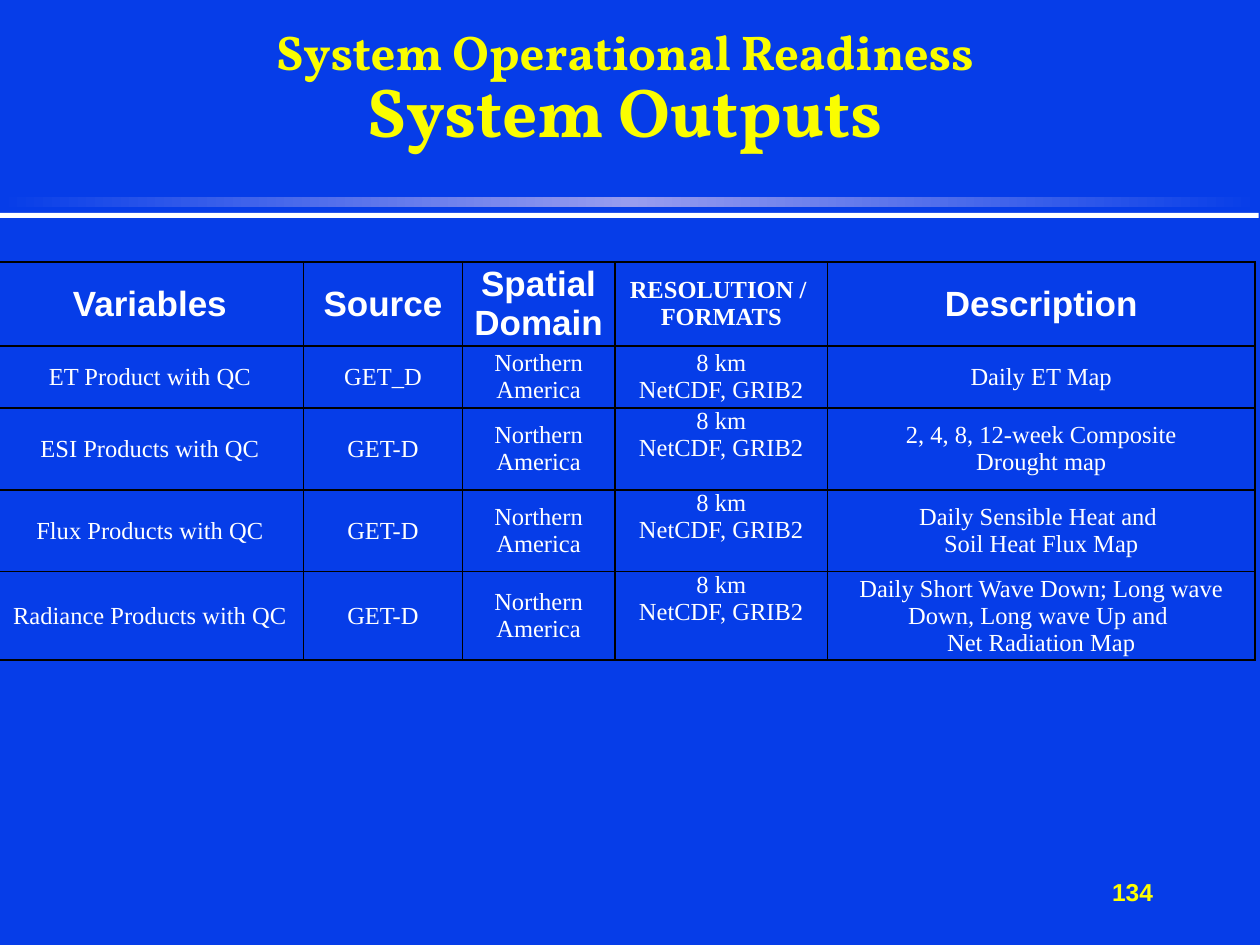
import pptx
import pptx.util
import pptx.dml.color
import pptx.enum.shapes
import pptx.enum.text
import pptx.oxml
import pptx.oxml.ns

WIDE, HIGH = 10, 7.5
HUES = {"back": "063DE8", "glow": "979CEF", "white": "FFFFFF",
        "title": "FAFD00", "page": "FFFF00", "grid": "000000"}
COLS = [2.44, 1.26, 1.21, 1.69, 3.39]
ROWS = [0.62, 0.49, 0.65, 0.65, 0.65]
FORMAT = 3
HEADS = ["Variables", "Source", "Spatial Domain",
         "RESOLUTION / \nFORMATS", "Description"]
ITEMS = [
    ("ET Product with QC", "GET_D", "Daily ET Map"),
    ("ESI Products with QC", "GET-D",
     "2, 4, 8, 12-week Composite\nDrought map"),
    ("Flux Products with QC", "GET-D",
     "Daily Sensible Heat and \nSoil Heat Flux Map"),
    ("Radiance Products with QC", "GET-D",
     "Daily Short Wave Down; Long wave Down, Long wave Up and \n"
     "Net Radiation Map"),
]
ALIGN = pptx.enum.text.PP_ALIGN
ANCHOR = pptx.enum.text.MSO_ANCHOR


def inch(*sizes):
    return [pptx.util.Inches(size) for size in sizes]


def color(name):
    return pptx.dml.color.RGBColor.from_string(HUES[name])


def style(run, size, face, hue, bold):
    run.font.size = pptx.util.Pt(size)
    run.font.name = face
    run.font.bold = bold
    run.font.color.rgb = color(hue)


def add_bar(slide, top, high):
    bar = slide.shapes.add_shape(
        pptx.enum.shapes.MSO_SHAPE.RECTANGLE, *inch(0, top, WIDE - 0.01, high))
    bar.shadow.inherit = False
    bar.line.fill.background()
    return bar


def fill_glow(bar):
    """Fade from the background to a light centre and back again."""
    bar.fill.gradient()
    bar.fill.gradient_angle = 0
    stops = bar._element.spPr.find(".//" + pptx.oxml.ns.qn("a:gsLst"))
    for stop in list(stops):
        stops.remove(stop)
    for place, hue in ((0, "back"), (50, "glow"), (100, "back")):
        stops.append(pptx.oxml.parse_xml(
            f'<a:gs {pptx.oxml.ns.nsdecls("a")} pos="{place * 1000}">'
            f'<a:srgbClr val="{HUES[hue]}"/></a:gs>'))


def add_text(slide, box, text, align, anchor, wrap=True):
    frame = slide.shapes.add_textbox(*inch(*box)).text_frame
    frame.word_wrap = wrap
    frame.vertical_anchor = anchor
    para = frame.paragraphs[0]
    para.text = text
    para.alignment = align
    return para


def add_title(slide):
    para = add_text(slide, (0.42, 0.33, 9.08, 0.92),
                    "System Operational Readiness\vSystem Outputs",
                    ALIGN.CENTER, ANCHOR.BOTTOM)
    para.line_spacing = 0.85
    for run, size in zip(para.runs, (27.9, 39.6)):
        style(run, size, "Vollkorn", "title", True)


def rule_cell(cell):
    props = cell._tc.get_or_add_tcPr()
    for side in "LRTB":
        props.append(pptx.oxml.parse_xml(
            f'<a:ln{side} {pptx.oxml.ns.nsdecls("a")} w="12700"><a:solidFill>'
            f'<a:srgbClr val="{HUES["grid"]}"/></a:solidFill></a:ln{side}>'))
    cell.fill.background()


def fill_cell(cell, text, size, face, bold, anchor):
    rule_cell(cell)
    cell.margin_left = cell.margin_right = pptx.util.Inches(0.06)
    cell.margin_top = cell.margin_bottom = 0
    cell.vertical_anchor = anchor
    cell.text_frame.text = text
    for para in cell.text_frame.paragraphs:
        para.alignment = ALIGN.CENTER
        for run in para.runs:
            style(run, size, face, "white", bold)


def add_grid(slide):
    table = slide.shapes.add_table(
        len(ROWS), len(COLS), *inch(-0.03, 2.08, sum(COLS), sum(ROWS))).table
    table.first_row = table.horz_banding = False
    for col, wide in zip(table.columns, COLS):
        col.width = pptx.util.Inches(wide)
    for row, high in zip(table.rows, ROWS):
        row.height = pptx.util.Inches(high)
    lines = [HEADS] + [
        [name, source, "Northern America", "8 km\nNetCDF, GRIB2", note]
        for name, source, note in ITEMS]
    for r, line in enumerate(lines):
        for c, text in enumerate(line):
            large = r == 0 and c != FORMAT
            high = r > 1 and c == FORMAT
            fill_cell(table.cell(r, c), text, 20 if large else 14,
                      "Arial" if large else "Times New Roman", r == 0,
                      ANCHOR.TOP if high else ANCHOR.MIDDLE)


def main():
    deck = pptx.Presentation()
    deck.slide_width, deck.slide_height = inch(WIDE, HIGH)
    slide = deck.slides.add_slide(deck.slide_layouts[6])
    slide.background.fill.solid()
    slide.background.fill.fore_color.rgb = color("back")
    fill_glow(add_bar(slide, 1.56, 0.08))
    line = add_bar(slide, 1.69, 0.04)
    line.fill.solid()
    line.fill.fore_color.rgb = color("white")
    add_title(slide)
    add_grid(slide)
    page = add_text(slide, (7.17, 6.83, 2.08, 0.5), "134",
                    ALIGN.RIGHT, ANCHOR.MIDDLE, False)
    style(page.runs[0], 14, "Arial", "page", True)
    deck.save("out.pptx")


if __name__ == "__main__":
    main()
